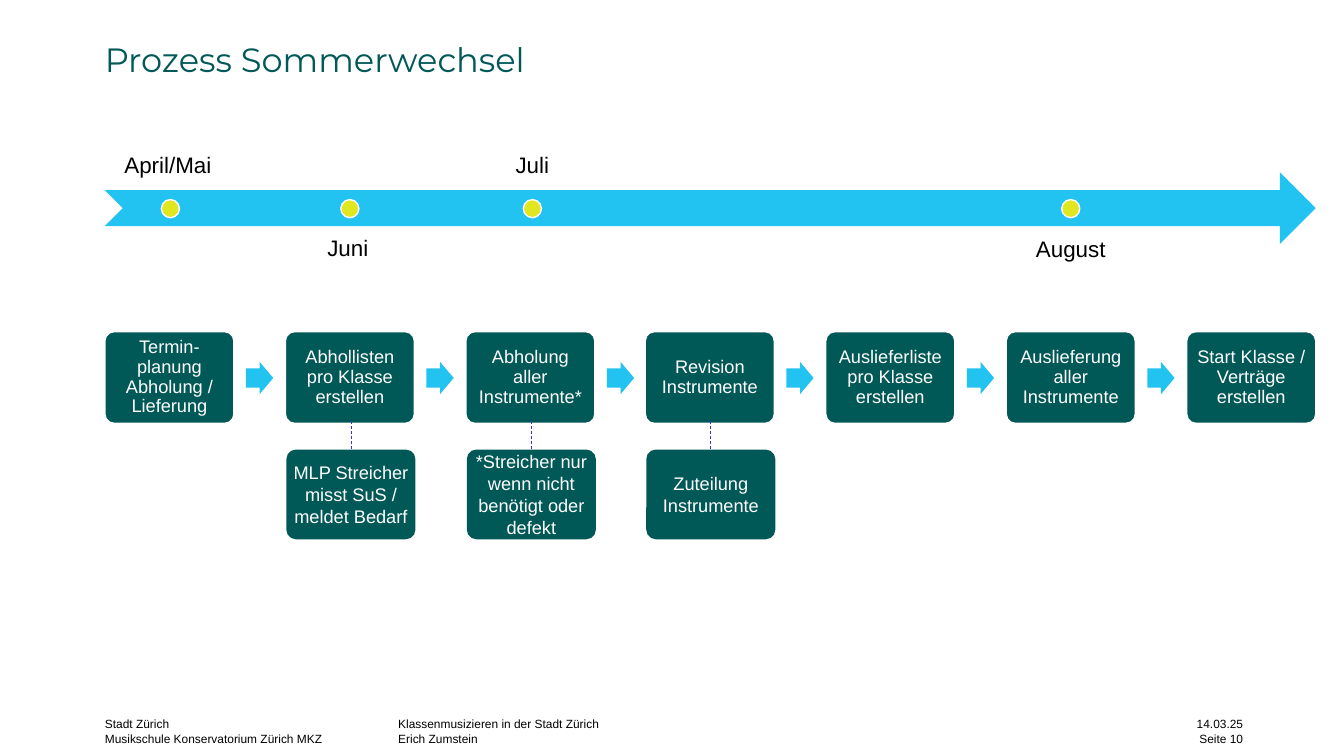
"""Build the slide that shows the summer changeover process."""
from lxml import etree
from pptx import Presentation
from pptx.dml.color import RGBColor
from pptx.enum.dml import MSO_LINE_DASH_STYLE as DASH
from pptx.enum.shapes import MSO_CONNECTOR, MSO_SHAPE
from pptx.enum.text import MSO_ANCHOR as ANCHOR, PP_ALIGN as ALIGN
from pptx.oxml.ns import qn
from pptx.util import Emu, Pt

PETROL, SKY, YELLOW = "005857", "23C3F1", "E0E721"
WHITE, BLACK, INDIGO = "FFFFFF", "000000", "3431DE"

STEP_LEFT, STEP_PITCH, STEP_WIDTH = 104, 178.8, 128
STEPS = [
    "Termin-planung Abholung / Lieferung",
    "Abhollisten pro Klasse erstellen",
    "Abholung aller Instrumente*",
    "Revision Instrumente",
    "Auslieferliste pro Klasse erstellen",
    "Auslieferung aller Instrumente",
    "Start Klasse / Verträge erstellen",
]
DETAILS = {
    1: "MLP Streicher misst SuS / meldet Bedarf",
    2: "*Streicher nur wenn nicht benötigt oder defekt",
    3: "Zuteilung Instrumente",
}
MONTHS = [
    ("April/Mai", (104, 118, 125, 71), ANCHOR.BOTTOM, 160),
    ("Juni", (215, 223, 260, 71), ANCHOR.TOP, 338),
    ("Juli", (398, 118, 260, 71), ANCHOR.BOTTOM, 519),
    ("August", (932, 224, 260, 71), ANCHOR.TOP, 1053),
]
FOOTERS = [
    ("Klassenmusizieren in der Stadt Zürich\nErich Zumstein", 395, 693, ALIGN.LEFT),
    ("Stadt Zürich\nMusikschule Konservatorium Zürich MKZ", 104, 252, ALIGN.LEFT),
    ("14.03.25\nSeite 10", 1123, 110, ALIGN.RIGHT),
]


def px(length):
    """Turn px, a hundred to the inch, into EMU."""
    return Emu(length * 9144)


def colour(value):
    """Turn a hex string into a colour."""
    return RGBColor.from_string(value)


def write(shape, text, size, fill, font="Arial", align=ALIGN.CENTER,
          anchor=ANCHOR.MIDDLE, inset=0, spacing=1.0):
    """Set and format the text of a shape."""
    frame = shape.text_frame
    frame.text = text
    frame.word_wrap = True
    frame.vertical_anchor = anchor
    frame.margin_left = frame.margin_right = px(inset)
    frame.margin_top = frame.margin_bottom = px(inset)
    for paragraph in frame.paragraphs:
        paragraph.alignment = align
        paragraph.line_spacing = spacing
        for run in paragraph.runs:
            run.font.name = font
            run.font.size = Pt(size)
            run.font.color.rgb = colour(fill)


def add_text(slide, box, text, size, fill, **style):
    """Add a text box."""
    textbox = slide.shapes.add_textbox(*map(px, box))
    write(textbox, text, size, fill, **style)


def add_shape(slide, kind, box, fill, outline=None, adjustments=()):
    """Add a filled preset shape."""
    shape = slide.shapes.add_shape(kind, *map(px, box))
    shape.shadow.inherit = False
    for index, value in enumerate(adjustments):
        shape.adjustments[index] = value
    shape.fill.solid()
    shape.fill.fore_color.rgb = colour(fill)
    if outline:
        shape.line.color.rgb = colour(outline)
        shape.line.width = Pt(1)
    else:
        shape.line.fill.background()
    return shape


def add_dashed_line(slide, x, top, bottom):
    """Add a thin dashed vertical connector."""
    line = slide.shapes.add_connector(
        MSO_CONNECTOR.STRAIGHT, px(x), px(top), px(x), px(bottom))
    line.line.color.rgb = colour(INDIGO)
    line.line.width = Pt(0.5)
    line.line.dash_style = DASH.DASH
    etree.SubElement(line._element.spPr, qn("a:effectLst"))


def add_process(slide):
    """Add the row of steps with arrows and the details below."""
    for index, text in enumerate(STEPS):
        left = round(STEP_LEFT + index * STEP_PITCH)
        step = add_shape(slide, MSO_SHAPE.ROUNDED_RECTANGLE,
                         (left, 329, STEP_WIDTH, 91), PETROL, WHITE, [0.1])
        write(step, text, 13, WHITE, inset=5, spacing=0.9)
        if index < len(STEPS) - 1:
            add_shape(slide, MSO_SHAPE.RIGHT_ARROW, (left + 140, 359, 27, 32),
                      SKY, adjustments=[0.6, 0.5])
        if index in DETAILS:
            detail = add_shape(slide, MSO_SHAPE.ROUNDED_RECTANGLE,
                               (left + 1, 446, STEP_WIDTH, 89), PETROL,
                               adjustments=[0.107])
            write(detail, DETAILS[index], 13, WHITE)
            add_dashed_line(slide, left + 1 + STEP_WIDTH // 2, 418, 446)


def add_timeline(slide):
    """Add the long arrow with its months and dots."""
    add_shape(slide, MSO_SHAPE.NOTCHED_RIGHT_ARROW, (104, 171, 1201, 71), SKY)
    for month, box, anchor, dot_left in MONTHS:
        add_text(slide, box, month, 16, BLACK, anchor=anchor, inset=12, spacing=0.9)
        add_shape(slide, MSO_SHAPE.OVAL, (dot_left, 198, 18, 18), YELLOW, WHITE)


def main():
    """Build and save the slide."""
    presentation = Presentation()
    presentation.slide_width, presentation.slide_height = px(1333), px(750)
    slide = presentation.slides.add_slide(presentation.slide_layouts[6])
    for text, left, width, align in FOOTERS:
        add_text(slide, (left, 711, width, 39), text, 8.5, BLACK, align=align,
                 anchor=ANCHOR.TOP, spacing=Pt(10.5))
    add_text(slide, (104, 33, 1130, 47), "Prozess Sommerwechsel", 24, PETROL,
             font="Montserrat", align=ALIGN.LEFT, anchor=ANCHOR.TOP, spacing=1.13)
    add_process(slide)
    add_timeline(slide)
    presentation.save("out.pptx")


if __name__ == "__main__":
    main()
